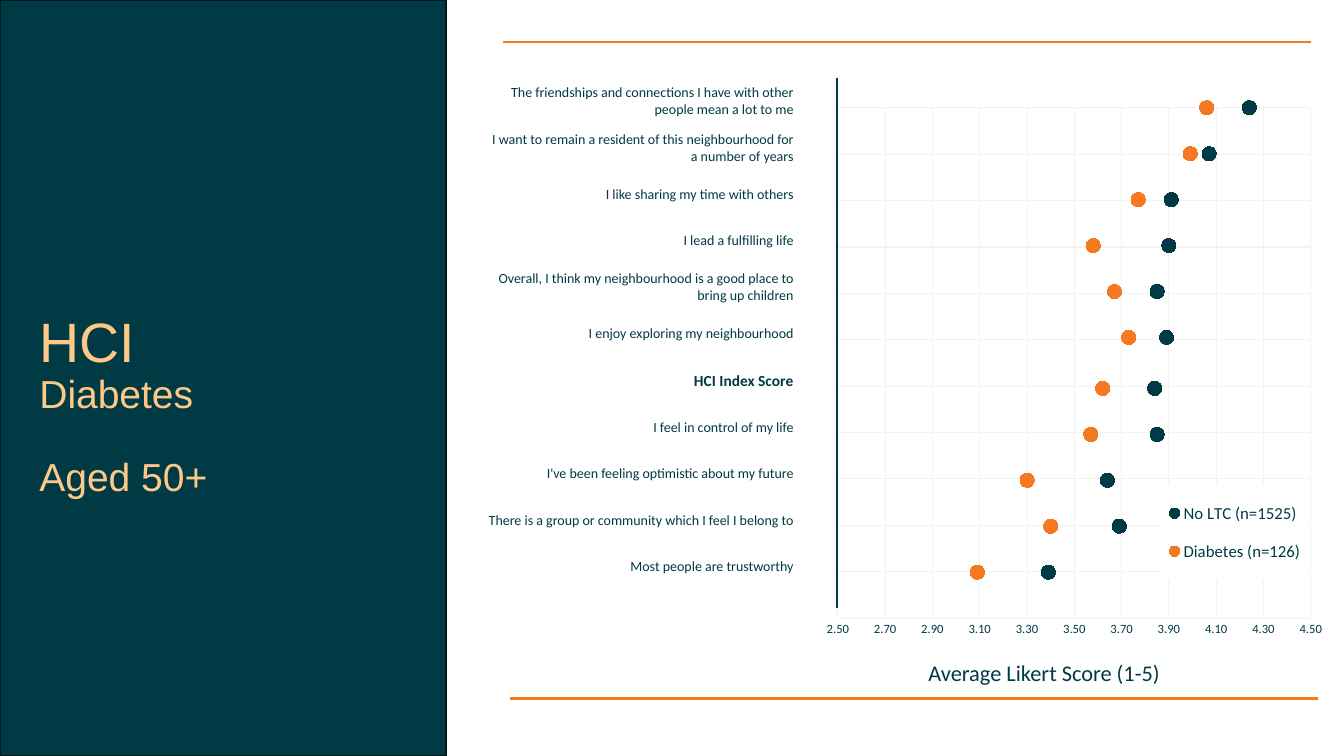
from lxml import etree
from pptx import Presentation
from pptx.chart.data import XyChartData
from pptx.dml.color import RGBColor
from pptx.enum.chart import XL_CHART_TYPE, XL_LEGEND_POSITION, XL_MARKER_STYLE, XL_TICK_MARK
from pptx.enum.shapes import MSO_CONNECTOR, MSO_SHAPE
from pptx.enum.text import MSO_ANCHOR, MSO_AUTO_SIZE, PP_ALIGN
from pptx.oxml import parse_xml
from pptx.oxml.ns import nsdecls, qn
from pptx.util import Inches, Pt

SCATTER = XL_CHART_TYPE.XY_SCATTER
LEGEND_TOP = XL_LEGEND_POSITION.TOP
CIRCLE = XL_MARKER_STYLE.CIRCLE
NO_TICK = XL_TICK_MARK.NONE
STRAIGHT = MSO_CONNECTOR.STRAIGHT
RECTANGLE = MSO_SHAPE.RECTANGLE
MIDDLE = MSO_ANCHOR.MIDDLE
GROW = MSO_AUTO_SIZE.SHAPE_TO_FIT_TEXT
NO_FIT = MSO_AUTO_SIZE.NONE
LEFT, RIGHT = PP_ALIGN.LEFT, PP_ALIGN.RIGHT

WIDTH, HEIGHT = 13.33, 7.5
TEAL, ORANGE, SAND = "003A44", "F47921", "FDC888"
GRID_GREY, PANEL_EDGE, WHITE = "F2F2F2", "00191E", "FFFFFF"
INDEX_ROW = "HCI Index Score"
ROW_SHARE = 6.16

STATEMENTS = [
    "The friendships and connections I have with other people mean a lot to me",
    "I want to remain a resident of this neighbourhood for a number of years",
    "I like sharing my time with others",
    "I lead a fulfilling life",
    "Overall, I think my neighbourhood is a good place to bring up children",
    "I enjoy exploring my neighbourhood",
    INDEX_ROW,
    "I feel in control of my life",
    "I've been feeling optimistic about my future",
    "There is a group or community which I feel I belong to",
    "Most people are trustworthy",
]
GROUPS = [
    ("No LTC (n=1525)", TEAL,
     [4.24, 4.07, 3.91, 3.90, 3.85, 3.89, 3.84, 3.85, 3.64, 3.69, 3.39]),
    ("Diabetes (n=126)", ORANGE,
     [4.06, 3.99, 3.77, 3.58, 3.67, 3.73, 3.62, 3.57, 3.30, 3.40, 3.09]),
]


def across(percent):
    return Inches(WIDTH * percent / 100)


def down(percent):
    return Inches(HEIGHT * percent / 100)


def place(left, top, width, height):
    return across(left), down(top), across(width), down(height)


def colour(hex_code):
    return RGBColor.from_string(hex_code)


def style_font(font, size, hex_code, face="Calibri", bold=False):
    font.size, font.name, font.bold = Pt(size), face, bold
    font.color.rgb = colour(hex_code)


def style_line(line, hex_code, weight):
    line.color.rgb = colour(hex_code)
    line.width = Pt(weight)


def add_rule(slide, start, end, hex_code, weight):
    rule = slide.shapes.add_connector(
        STRAIGHT, across(start[0]), down(start[1]), across(end[0]), down(end[1]))
    style_line(rule.line, hex_code, weight)
    etree.SubElement(rule._element.spPr, qn("a:effectLst"))


def add_panel(slide):
    panel = slide.shapes.add_shape(RECTANGLE, *place(0, 0, 33.16, 100))
    panel.shadow.inherit = False
    panel.fill.solid()
    panel.fill.fore_color.rgb = colour(TEAL)
    style_line(panel.line, PANEL_EDGE, 1.5)


def write_title(slide):
    title = slide.shapes.title
    title.left, title.top, title.width, title.height = place(2.18, 40.4, 29.26, 26.93)
    frame = title.text_frame
    frame.text = "HCI\nDiabetes\nAged 50+"
    frame.word_wrap, frame.auto_size = True, NO_FIT
    frame.vertical_anchor = MIDDLE
    for paragraph, size, gap in zip(frame.paragraphs, (39.6, 27.9, 27.9), (0, 0, 29)):
        paragraph.alignment = LEFT
        paragraph.line_spacing = 0.9
        paragraph.space_before = Pt(gap)
        style_font(paragraph.runs[0].font, size, SAND, "Arial")


def add_axis_caption(slide):
    caption = slide.shapes.add_textbox(*place(68.34, 86.53, 23.33, 4.93))
    frame = caption.text_frame
    frame.text = "Average Likert Score (1-5)"
    frame.word_wrap, frame.auto_size = False, GROW
    style_font(frame.paragraphs[0].runs[0].font, 16, TEAL)


def white_fill():
    return parse_xml(
        f'<c:spPr {nsdecls("c", "a")}><a:solidFill><a:srgbClr val="{WHITE}"/>'
        '</a:solidFill><a:ln><a:noFill/></a:ln></c:spPr>')


def manual_layout(x, y, w, h, target=""):
    return parse_xml(
        f'<c:layout {nsdecls("c")}><c:manualLayout>{target}'
        '<c:xMode val="edge"/><c:yMode val="edge"/>'
        f'<c:x val="{x}"/><c:y val="{y}"/><c:w val="{w}"/><c:h val="{h}"/>'
        '</c:manualLayout></c:layout>')


def drop_layout(parent):
    for layout in parent.findall(qn("c:layout")):
        parent.remove(layout)


def style_axis(axis, low, high, step):
    axis.minimum_scale, axis.maximum_scale, axis.major_unit = low, high, step
    axis.has_major_gridlines = True
    style_line(axis.major_gridlines.format.line, GRID_GREY, 0.75)
    axis.major_tick_mark = axis.minor_tick_mark = NO_TICK


def style_series(series, hex_code):
    series.format.line.fill.background()
    marker = series.marker
    marker.style, marker.size = CIRCLE, 10
    marker.format.fill.solid()
    marker.format.fill.fore_color.rgb = colour(hex_code)
    marker.format.line.fill.background()
    tint = marker._element.find(".//" + qn("a:srgbClr"))
    etree.SubElement(tint, qn("a:alpha")).set("val", "70000")


def style_legend(chart):
    chart.has_legend = True
    legend = chart.legend
    legend.position = LEGEND_TOP
    legend.include_in_layout = True
    style_font(legend.font, 12, TEAL)
    element = legend._element
    drop_layout(element)
    element.find(qn("c:legendPos")).addnext(manual_layout(0.68, 0.71, 0.27, 0.155))
    element.find(qn("c:overlay")).addnext(white_fill())


def add_score_chart(slide):
    count = len(STATEMENTS)
    data = XyChartData()
    for name, _, scores in GROUPS:
        points = data.add_series(name)
        for row, score in enumerate(scores):
            points.add_data_point(score, round(100 * (count - row) / count))
    chart = slide.shapes.add_chart(SCATTER, *place(58.81, 7.2, 40.59, 80.27), data).chart
    chart.has_title = False
    style_font(chart.font, 10, TEAL)
    for series, (_, hex_code, _) in zip(chart.plots[0].series, GROUPS):
        style_series(series, hex_code)

    score_axis, row_axis = chart.category_axis, chart.value_axis
    style_axis(score_axis, 2.5, 4.5, 0.2)
    style_line(score_axis.format.line, GRID_GREY, 0.75)
    style_font(score_axis.tick_labels.font, 9, TEAL)
    score_axis.tick_labels.number_format = "0.00"
    score_axis.tick_labels.number_format_is_linked = False
    style_axis(row_axis, 0, 100, 9.09)
    row_axis.visible = False

    style_legend(chart)
    plot_area = chart._chartSpace.chart.plotArea
    drop_layout(plot_area)
    plot_area.insert(0, manual_layout(
        0.087, 0.088, 0.867, 0.841, '<c:layoutTarget val="inner"/>'))
    chart._chartSpace.chart.addnext(white_fill())


def add_statements(slide):
    count = len(STATEMENTS)
    table = slide.shapes.add_table(
        count, 1, *place(36.23, 10.27, 22.88, count * ROW_SHARE)).table
    table.first_row = table.horz_banding = False
    for row, statement in enumerate(STATEMENTS):
        table.rows[row].height = down(ROW_SHARE)
        cell = table.cell(row, 0)
        cell.fill.background()
        cell.vertical_anchor = MIDDLE
        cell.margin_left = cell.margin_right = cell.margin_top = Inches(0.01)
        cell.margin_bottom = 0
        paragraph = cell.text_frame.paragraphs[0]
        paragraph.text = statement
        paragraph.alignment = RIGHT
        is_index = statement == INDEX_ROW
        style_font(paragraph.runs[0].font, 11 if is_index else 10, TEAL, bold=is_index)


def main():
    deck = Presentation()
    deck.slide_width, deck.slide_height = Inches(WIDTH), Inches(HEIGHT)
    slide = deck.slides.add_slide(deck.slide_layouts[5])
    add_panel(slide)
    write_title(slide)
    slide.shapes._spTree.append(slide.shapes.title._element)
    add_rule(slide, (37.43, 5.6), (97.52, 5.6), ORANGE, 1.5)
    add_rule(slide, (37.96, 92.4), (98.05, 92.4), ORANGE, 1.5)
    add_axis_caption(slide)
    add_score_chart(slide)
    add_rule(slide, (62.27, 10.27), (62.27, 80.4), TEAL, 1)
    add_statements(slide)
    deck.save("out.pptx")


if __name__ == "__main__":
    main()
